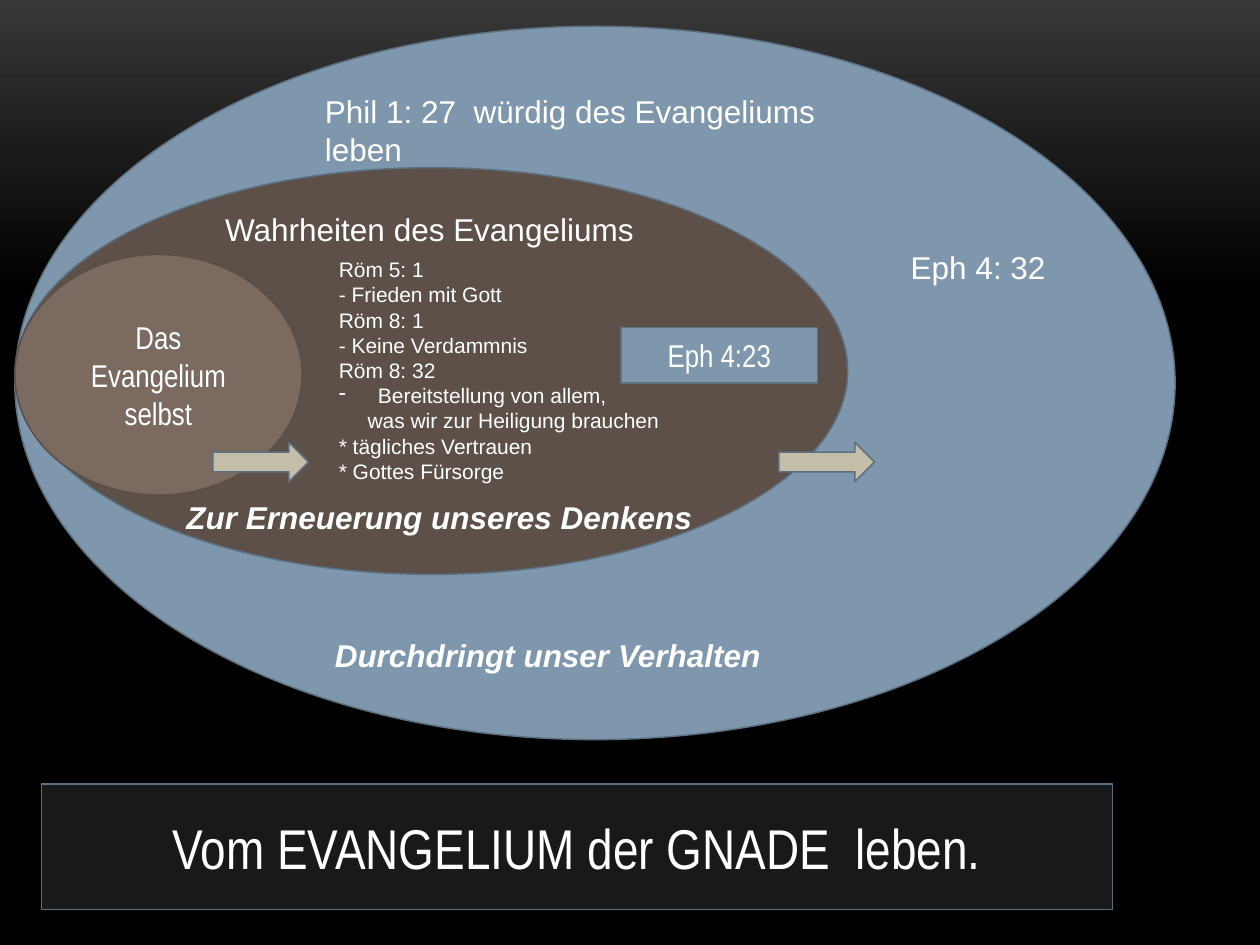
from lxml import etree
from pptx import Presentation
from pptx import util as u
from pptx.dml.color import RGBColor
from pptx.enum import shapes, text
from pptx.oxml.ns import qn

WHITE = RGBColor(0xFF, 0xFF, 0xFF)
BLACK = RGBColor(0, 0, 0)
GREY = RGBColor(0x38, 0x38, 0x38)
BLUE = RGBColor(0x7E, 0x97, 0xAD)
EDGE = RGBColor(0x5D, 0x70, 0x80)
BROWN = RGBColor(0x5C, 0x50, 0x48)
TAUPE = RGBColor(0x7A, 0x6A, 0x60)
UMBER = RGBColor(0x5A, 0x4E, 0x47)
SAND = RGBColor(0xC4, 0xBE, 0xA9)
COAL = RGBColor(0x17, 0x19, 0x1A)

KIND = shapes.MSO_SHAPE
NARROW = {"name": "Arial Narrow", "size": u.Pt(18)}
PLAIN = {"name": "Arial", "size": u.Pt(18)}
STRONG = {**PLAIN, "bold": True, "italic": True}
SMALL = {**PLAIN, "size": u.Pt(12)}
HEAD = {**NARROW, "size": u.Pt(32)}

# Content; boxes are left, top, width, height in cm
TITLE = "Vom EVANGELIUM der GNADE  leben."
TITLE_BOX = (0.84, 15.8, 21.59, 2.54)

RINGS = [
    ((0.3, 0.53, 23.39, 14.38), BLUE, EDGE, ""),
    ((0.33, 3.38, 16.76, 8.2), BROWN, EDGE, ""),
    ((0.3, 5.13, 5.79, 4.85), TAUPE, UMBER, "Das Evangelium selbst"),
]
LABELS = [
    ("Wahrheiten des Evangeliums", (4.29, 4.11, 9.55), PLAIN),
    ("Zur Erneuerung unseres Denkens", (3.51, 9.91, 12.8), STRONG),
    ("Phil 1: 27  würdig des Evangeliums leben", (6.3, 1.73, 11.4), PLAIN),
    ("Durchdringt unser Verhalten", (6.5, 12.7, 10.01), STRONG),
    ("Eph 4: 32", (18.11, 4.88, 5.21), PLAIN),
]
LABEL_H = 1.02

# Each verse line: text, left margin, first-line indent, bullet
VERSES = [
    ("Röm 5: 1", 0, 0, ""),
    ("- Frieden mit Gott", 0, 0, ""),
    ("Röm 8: 1", 0, 0, ""),
    ("- Keine Verdammnis", 0, 0, ""),
    ("Röm 8: 32", 0, 0, ""),
    ("Bereitstellung von allem,", 0.79, -0.79, "-"),
    ("was wir zur Heiligung brauchen", 0.58, 0, ""),
    ("* tägliches Vertrauen", 0, 0, ""),
    ("* Gottes Fürsorge", 0, 0, ""),
]
VERSE_BOX = (6.58, 5.05, 10.13, 4.88)

ARROWS = [4.29, 15.7]
ARROW_Y, ARROW_W, ARROW_H = 8.92, 1.93, 0.79
TAG, TAG_BOX = "Eph 4:23", (12.52, 6.6, 3.96, 1.12)


def cms(box):
    return [u.Cm(n) for n in box]


def style(para, look):
    for key, val in look.items():
        setattr(para.font, key, val)
    para.font.color.rgb = WHITE


def paint(shape, fill, edge):
    shape.fill.solid()
    shape.fill.fore_color.rgb = fill
    shape.line.color.rgb = edge
    shape.line.width = u.Pt(0.85)


def center(shape, words, look):
    frame = shape.text_frame
    frame.text = words
    frame.word_wrap = True
    frame.auto_size = text.MSO_AUTO_SIZE.NONE
    frame.vertical_anchor = text.MSO_ANCHOR.MIDDLE
    para = frame.paragraphs[0]
    para.alignment = text.PP_ALIGN.CENTER
    style(para, look)


def draw(slide, kind, box, fill, edge=EDGE, words=""):
    shape = slide.shapes.add_shape(kind, *cms(box))
    shape.shadow.inherit = False
    paint(shape, fill, edge)
    if words:
        center(shape, words, NARROW)


def write(slide, box, lines, look):
    frame = slide.shapes.add_textbox(*cms(box)).text_frame
    frame.word_wrap = True
    frame.auto_size = text.MSO_AUTO_SIZE.SHAPE_TO_FIT_TEXT
    for i, (words, left, first, mark) in enumerate(lines):
        para = frame.add_paragraph() if i else frame.paragraphs[0]
        para.text = words
        if left:
            props = para._p.get_or_add_pPr()
            props.set("marL", str(u.Cm(left)))
            props.set("indent", str(u.Cm(first)))
            if mark:
                etree.SubElement(props, qn("a:buChar")).set("char", mark)
        style(para, look)


def main():
    prs = Presentation()
    prs.slide_width, prs.slide_height = u.Cm(25.4), u.Cm(19.05)
    slide = prs.slides.add_slide(prs.slide_layouts[5])

    # Background fading to black from the top
    back = slide.background.fill
    back.gradient()
    back.gradient_angle = 270
    for stop, pos, color in zip(back.gradient_stops, (0, 0.31), (GREY, BLACK)):
        stop.position = pos
        stop.color.rgb = color

    # Title bar
    title = slide.shapes.title
    title.left, title.top, title.width, title.height = cms(TITLE_BOX)
    paint(title, COAL, EDGE)
    center(title, TITLE, HEAD)

    # Nested ellipses
    for box, fill, edge, words in RINGS:
        draw(slide, KIND.OVAL, box, fill, edge, words)

    # Labels and verses
    for words, box, look in LABELS:
        write(slide, (*box, LABEL_H), [(words, 0, 0, "")], look)
    write(slide, VERSE_BOX, VERSES, SMALL)

    # Arrows and tag
    for x in ARROWS:
        draw(slide, KIND.RIGHT_ARROW, (x, ARROW_Y, ARROW_W, ARROW_H), SAND)
    draw(slide, KIND.RECTANGLE, TAG_BOX, BLUE, words=TAG)

    prs.save("out.pptx")


if __name__ == "__main__":
    main()
